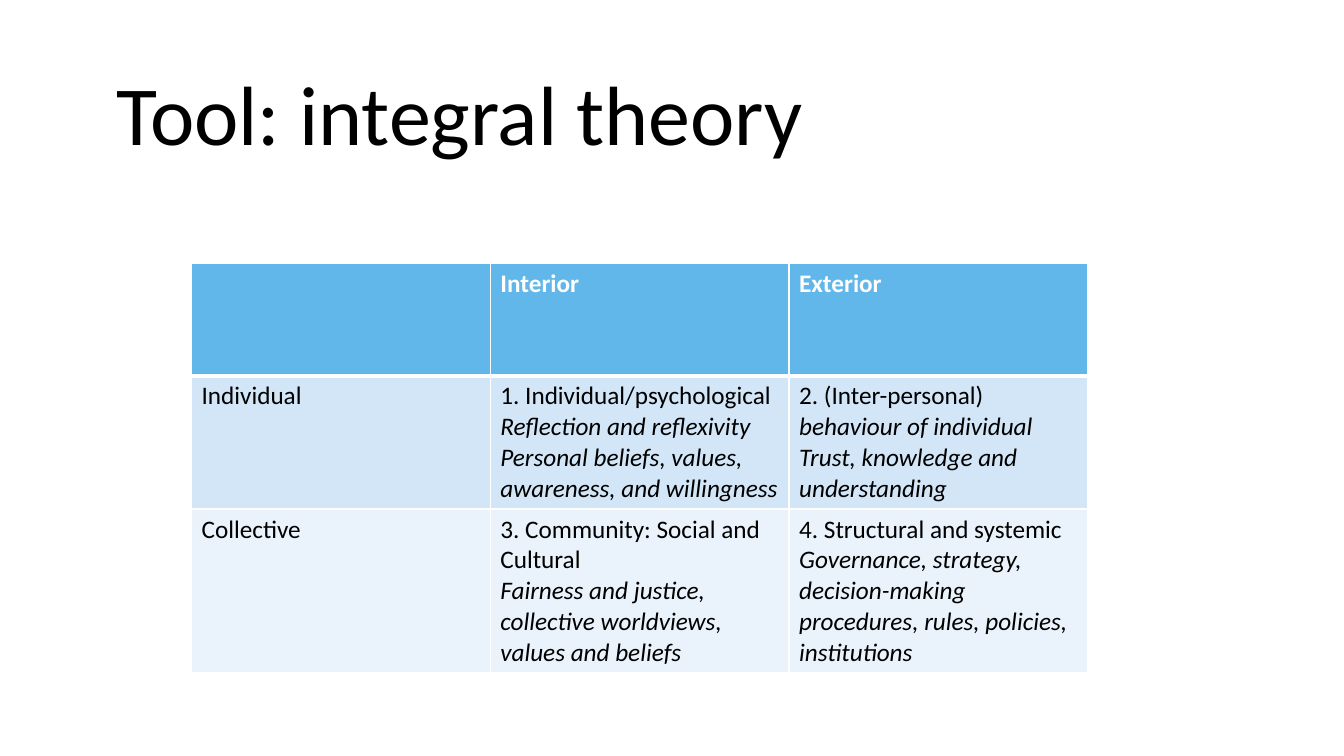
"""Build the integral theory slide with its four-quadrant table."""
from dataclasses import dataclass

from lxml.etree import SubElement
from pptx import Presentation
from pptx.dml.color import RGBColor
from pptx.enum.text import MSO_ANCHOR, MSO_AUTO_SIZE, PP_ALIGN
from pptx.oxml.ns import qn
from pptx.util import Inches, Pt

BLACK = RGBColor(0x00, 0x00, 0x00)
WHITE = RGBColor(0xFF, 0xFF, 0xFF)
HEADER_BLUE = RGBColor(0x62, 0xB7, 0xEA)
INDIVIDUAL_BLUE = RGBColor(0xD3, 0xE6, 0xF7)
COLLECTIVE_BLUE = RGBColor(0xEA, 0xF3, 0xFB)
FONT = "Calibri"


@dataclass(frozen=True)
class Phrase:
    text: str
    italic: bool = False


@dataclass(frozen=True)
class Band:
    fill: RGBColor
    color: RGBColor
    bold: bool
    top: float
    bottom: float
    cells: tuple[tuple[tuple[Phrase, ...], ...], ...]


BANDS = (
    Band(HEADER_BLUE, WHITE, True, 1, 3, (
        (),
        ((Phrase("Interior"),),),
        ((Phrase("Exterior"),),),
    )),
    Band(INDIVIDUAL_BLUE, BLACK, False, 3, 1, (
        ((Phrase("Individual"),),),
        ((Phrase("1. Individual/psychological "),
          Phrase("Reflection and reflexivity Personal beliefs, values, "
                 "awareness, and willingness", True)),),
        ((Phrase("2. (Inter-personal) "), Phrase("behaviour of individual", True)),
         (Phrase("Trust, knowledge and understanding", True),)),
    )),
    Band(COLLECTIVE_BLUE, BLACK, False, 1, 1, (
        ((Phrase("Collective"),),),
        ((Phrase("3. Community: Social and Cultural"),),
         (Phrase("Fairness and justice, collective worldviews, values and beliefs", True),)),
        ((Phrase("4. Structural and systemic"),),
         (Phrase("Governance, strategy, decision-making procedures, rules, "
                 "policies, institutions", True),)),
    )),
)


def add_run(paragraph, phrase: Phrase, size: float, color: RGBColor, bold: bool = False) -> None:
    run = paragraph.add_run()
    run.text = phrase.text
    run.font.name = FONT
    run.font.size = Pt(size)
    run.font.bold = bold
    run.font.italic = phrase.italic
    run.font.color.rgb = color


def add_borders(cell, top: float, bottom: float) -> None:
    properties = cell._tc.get_or_add_tcPr()
    for side, width in (("L", 1), ("R", 1), ("T", top), ("B", bottom)):
        line = SubElement(properties, qn(f"a:ln{side}"), w=str(Pt(width)))
        SubElement(SubElement(line, qn("a:solidFill")), qn("a:srgbClr"), val=str(WHITE))


def fill_cell(cell, band: Band, paragraphs: tuple[tuple[Phrase, ...], ...]) -> None:
    add_borders(cell, band.top, band.bottom)
    cell.fill.solid()
    cell.fill.fore_color.rgb = band.fill
    for index, phrases in enumerate(paragraphs):
        frame = cell.text_frame
        paragraph = frame.add_paragraph() if index else frame.paragraphs[0]
        for phrase in phrases:
            add_run(paragraph, phrase, 18, band.color, band.bold)


def add_heading(slide) -> None:
    heading = slide.shapes.title
    heading.left, heading.top = Inches(-0.44), Inches(0)
    heading.width, heading.height = Inches(10), Inches(2.61)
    frame = heading.text_frame
    frame.word_wrap = True
    frame.auto_size = MSO_AUTO_SIZE.NONE
    frame.vertical_anchor = MSO_ANCHOR.BOTTOM
    frame.margin_bottom = Inches(0.99)
    paragraph = frame.paragraphs[0]
    paragraph.alignment = PP_ALIGN.CENTER
    paragraph.line_spacing = 0.9
    add_run(paragraph, Phrase("Tool: integral theory"), 60, BLACK)


def add_quadrants(slide) -> None:
    quadrants = slide.shapes.add_table(
        len(BANDS), 3, Inches(1.9), Inches(2.61), Inches(8.89), Inches(3.36))
    for row, band in enumerate(BANDS):
        for column, paragraphs in enumerate(band.cells):
            fill_cell(quadrants.table.cell(row, column), band, paragraphs)
    quadrants.height = Inches(4.02)


def main() -> None:
    deck = Presentation()
    deck.slide_width, deck.slide_height = Inches(13.33), Inches(7.5)
    slide = deck.slides.add_slide(deck.slide_layouts[5])
    add_heading(slide)
    add_quadrants(slide)
    deck.save("out.pptx")


if __name__ == "__main__":
    main()
